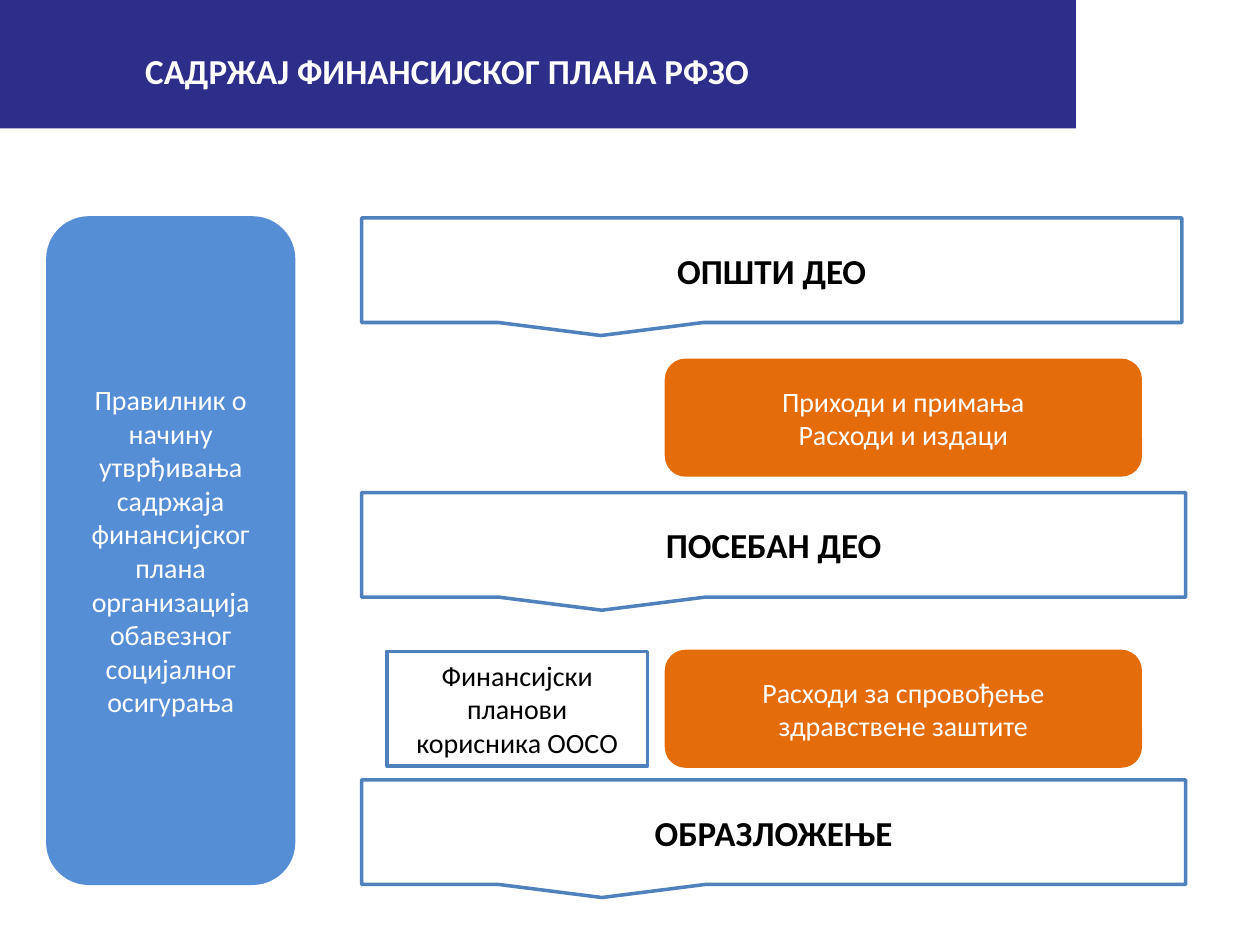
from collections import namedtuple

from pptx import Presentation
from pptx import util as u
from pptx.dml.color import RGBColor
from pptx.enum import shapes, text

COLOURS = {
    "navy": "2D2D8A",
    "blue": "558ED5",
    "outline": "4F81BD",
    "orange": "E46C0A",
    "white": "FFFFFF",
    "black": "000000",
}
FONT = "Calibri"
COLUMNS, ROWS = 100, 75
SLIDE_WIDTH, SLIDE_HEIGHT = u.Inches(10), u.Inches(7.5)
SHAPE = shapes.MSO_SHAPE

# Lengths are in columns and rows of the slide grid.
Box = namedtuple("Box", "left top width height")


def colour(name):
    return RGBColor.from_string(COLOURS[name])


def to_emu(box):
    column, row = SLIDE_WIDTH / COLUMNS, SLIDE_HEIGHT / ROWS
    return (round(box.left * column), round(box.top * row),
            round(box.width * column), round(box.height * row))


def inside(box, left, top, width, height):
    """Return a box whose corner is offset from the corner of another."""
    return Box(box.left + left, box.top + top, width, height)


def write(frame, lines, size=16, ink="white", bold=False, wrap=True):
    frame.word_wrap = wrap
    frame.vertical_anchor = text.MSO_ANCHOR.MIDDLE
    for number, line in enumerate(lines):
        paragraph = frame.paragraphs[0] if number == 0 else frame.add_paragraph()
        paragraph.alignment = text.PP_ALIGN.CENTER
        run = paragraph.add_run()
        run.text = line
        run.font.name = FONT
        run.font.size = u.Pt(size)
        run.font.bold = bold
        run.font.color.rgb = colour(ink)


def add_panel(slide, kind, box, fill, outline=None, lines=(), **text_format):
    panel = slide.shapes.add_shape(kind, *to_emu(box))
    panel.shadow.inherit = False
    panel.fill.solid()
    panel.fill.fore_color.rgb = colour(fill)
    if outline:
        panel.line.color.rgb = colour(outline)
        panel.line.width = u.Pt(2)
    else:
        panel.line.fill.background()
    write(panel.text_frame, lines, **text_format)


def add_header(slide, box, title):
    add_panel(slide, SHAPE.RECTANGLE, box, "navy")
    title_box = slide.shapes.add_textbox(*to_emu(inside(box, 10, 3.4, 51, 4.4)))
    write(title_box.text_frame, [title], size=20, bold=True, wrap=False)


def add_rulebook(slide, box, title):
    add_panel(slide, SHAPE.ROUNDED_RECTANGLE, box, "blue", "blue", [title])


def add_section(slide, box, heading, contents=(), users=(), gap=0):
    """Place a heading callout with its contents, and users, a gap below it."""
    add_panel(slide, SHAPE.RECTANGULAR_CALLOUT, box, "white", "outline",
              [heading], size=20, ink="black", bold=True)
    detail_top = box.height + gap
    if contents:
        add_panel(slide, SHAPE.ROUNDED_RECTANGLE,
                  inside(box, 24.2, detail_top, 37.6, 9.1),
                  "orange", "orange", contents)
    if users:
        add_panel(slide, SHAPE.RECTANGLE,
                  inside(box, 2, detail_top, 20.7, 9.1),
                  "white", "outline", users, ink="black")


def main():
    deck = Presentation()
    deck.slide_width, deck.slide_height = SLIDE_WIDTH, SLIDE_HEIGHT
    slide = deck.slides.add_slide(deck.slide_layouts[6])

    add_header(slide, Box(0, 0, 85.4, 10.2), "САДРЖАЈ ФИНАНСИЈСКОГ ПЛАНА РФЗО")
    add_rulebook(slide, Box(3.8, 17.3, 19.5, 52.8),
                 "Правилник о начину утврђивања садржаја финансијског плана "
                 "организација обавезног социјалног осигурања")
    add_section(slide, Box(28.7, 17.3, 65.1, 8.3), "ОПШТИ ДЕО",
                contents=["Приходи и примања", "Расходи и издаци"], gap=3)
    add_section(slide, Box(28.7, 39.1, 65.4, 8.3), "ПОСЕБАН ДЕО",
                contents=["Расходи за спровођење", "здравствене заштите"],
                users=["Финансијски планови", "корисника ООСО"], gap=4.3)
    add_section(slide, Box(28.7, 61.9, 65.4, 8.3), "ОБРАЗЛОЖЕЊЕ")

    deck.save("out.pptx")


if __name__ == "__main__":
    main()
